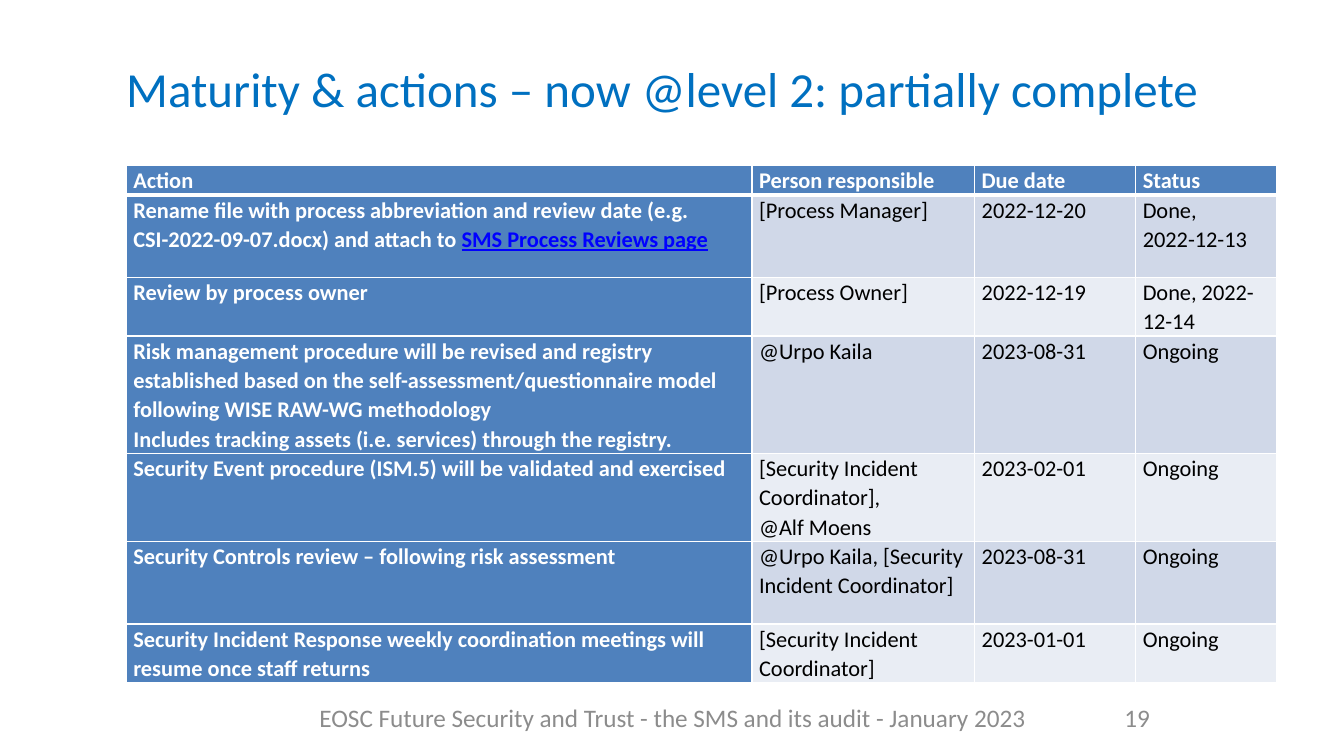
from dataclasses import dataclass

import lxml.etree
import pptx
import pptx.dml.color
import pptx.enum.text
import pptx.oxml.ns
import pptx.util

Cm = pptx.util.Cm
Pt = pptx.util.Pt
ALIGN = pptx.enum.text.PP_ALIGN
FONT = "Calibri"
COLOURS = {
    "title": "0070C0",
    "footer": "8C8C8C",
    "head": "4F81BD",
    "band_dark": "D0D8E8",
    "band_light": "E9EDF4",
    "white": "FFFFFF",
    "black": "000000",
    "link": "0000FF",
}
LEFT, WIDTH = 3.18, 29.0
COL_WIDTHS = [15.77, 5.61, 4.06, 3.56]
HEADINGS = ["Action", "Person responsible", "Due date", "Status"]
HEAD_HEIGHT = 0.69


@dataclass(frozen=True)
class ActionRow:
    height: float
    action: str
    person: str
    due: str
    status: str
    link: str = ""


@dataclass(frozen=True)
class FooterBox:
    left: float
    width: float
    text: str
    align: ALIGN


ACTIONS = [
    ActionRow(2.08, "Rename file with process abbreviation and review date (e.g. "
              "CSI-2022-09-07.docx) and attach to ", "[Process Manager]",
              "2022-12-20", "Done,\n2022-12-13", "SMS Process Reviews page"),
    ActionRow(1.37, "Review by process owner", "[Process Owner]",
              "2022-12-19", "Done, 2022-12-14"),
    ActionRow(2.79, "Risk management procedure will be revised and registry established "
              "based on the self-assessment/questionnaire model following WISE RAW-WG "
              "methodology\nIncludes tracking assets (i.e. services) through the registry.",
              "@Urpo Kaila", "2023-08-31", "Ongoing"),
    ActionRow(2.08, "Security Event procedure (ISM.5) will be validated and exercised",
              "[Security Incident Coordinator],\n@Alf Moens", "2023-02-01", "Ongoing"),
    ActionRow(2.08, "Security Controls review – following risk assessment",
              "@Urpo Kaila, [Security Incident Coordinator]", "2023-08-31", "Ongoing"),
    ActionRow(1.37, "Security Incident Response weekly coordination meetings will resume "
              "once staff returns", "[Security Incident Coordinator]",
              "2023-01-01", "Ongoing"),
]
FOOTERS = [
    FooterBox(8.05, 18.72, "EOSC Future Security and Trust - the SMS and its audit - January 2023",
              ALIGN.LEFT),
    FooterBox(27.51, 1.47, "19", ALIGN.RIGHT),
]


def rgb(name: str) -> pptx.dml.color.RGBColor:
    return pptx.dml.color.RGBColor.from_string(COLOURS[name])


def add_run(p, text: str, size: float, colour: str, bold: bool = False,
            underline: bool = False) -> None:
    r = p.add_run()
    r.text = text
    r.font.name = FONT
    r.font.size = Pt(size)
    r.font.bold = bold
    r.font.underline = underline
    r.font.color.rgb = rgb(colour)


def clear_frame(tf) -> None:
    tf.margin_left = tf.margin_right = tf.margin_top = tf.margin_bottom = 0
    tf.word_wrap = True
    tf.auto_size = pptx.enum.text.MSO_AUTO_SIZE.NONE
    tf.vertical_anchor = pptx.enum.text.MSO_ANCHOR.TOP


def set_borders(cell, top: float, bottom: float) -> None:
    tc_pr = cell._tc.get_or_add_tcPr()
    qn = pptx.oxml.ns.qn
    widths = {"a:lnL": 1, "a:lnR": 1, "a:lnT": top, "a:lnB": bottom}
    for i, (tag, width) in enumerate(widths.items()):
        ln = lxml.etree.Element(qn(tag), w=str(Pt(width)))
        fill = lxml.etree.SubElement(ln, qn("a:solidFill"))
        lxml.etree.SubElement(fill, qn("a:srgbClr"), val=COLOURS["white"])
        tc_pr.insert(i, ln)


def fill_cell(cell, text: str, fill: str, strong: bool, link: str = "") -> None:
    cell.fill.solid()
    cell.fill.fore_color.rgb = rgb(fill)
    cell.margin_left = cell.margin_right = Cm(0.18)
    cell.margin_top = cell.margin_bottom = 0
    tf = cell.text_frame
    colour = "white" if strong else "black"
    for i, line in enumerate(text.split("\n")):
        p = tf.paragraphs[0] if i == 0 else tf.add_paragraph()
        p.line_spacing = 1.07
        p.space_after = Pt(0.1)
        add_run(p, line, 16, colour, strong)
    if link:
        add_run(p, link, 16, "link", strong, True)


def add_title(s) -> None:
    sp = s.shapes.title
    sp.left, sp.top, sp.width, sp.height = Cm(LEFT), Cm(1.47), Cm(WIDTH), Cm(1.5)
    clear_frame(sp.text_frame)
    p = sp.text_frame.paragraphs[0]
    p.alignment = ALIGN.LEFT
    p.line_spacing = 1.0
    add_run(p, "Maturity & actions – now @level 2: partially complete", 35, "title")


def add_actions_table(s) -> None:
    heights = [HEAD_HEIGHT] + [a.height for a in ACTIONS]
    table = s.shapes.add_table(len(heights), len(COL_WIDTHS), Cm(LEFT), Cm(4.17),
                               Cm(WIDTH), Cm(sum(heights))).table
    for column, width in zip(table.columns, COL_WIDTHS):
        column.width = Cm(width)
    for row, height in zip(table.rows, heights):
        row.height = Cm(height)
    for j, heading in enumerate(HEADINGS):
        fill_cell(table.cell(0, j), heading, "head", True)
        set_borders(table.cell(0, j), 1, 3)
    for i, a in enumerate(ACTIONS, start=1):
        band = "band_dark" if i % 2 else "band_light"
        fill_cell(table.cell(i, 0), a.action, "head", True, a.link)
        for j, text in enumerate([a.person, a.due, a.status], start=1):
            fill_cell(table.cell(i, j), text, band, False)
        for j in range(len(COL_WIDTHS)):
            set_borders(table.cell(i, j), 3 if i == 1 else 1, 1)


def add_footer(s, box: FooterBox) -> None:
    sp = s.shapes.add_textbox(Cm(box.left), Cm(17.7), Cm(box.width), Cm(0.97))
    clear_frame(sp.text_frame)
    p = sp.text_frame.paragraphs[0]
    p.alignment = box.align
    add_run(p, box.text, 18, "footer")


def main() -> None:
    prs = pptx.Presentation()
    prs.slide_width, prs.slide_height = Cm(33.87), Cm(19.05)
    s = prs.slides.add_slide(prs.slide_layouts[5])
    add_title(s)
    add_actions_table(s)
    for box in FOOTERS:
        add_footer(s, box)
    prs.save("out.pptx")


if __name__ == "__main__":
    main()
